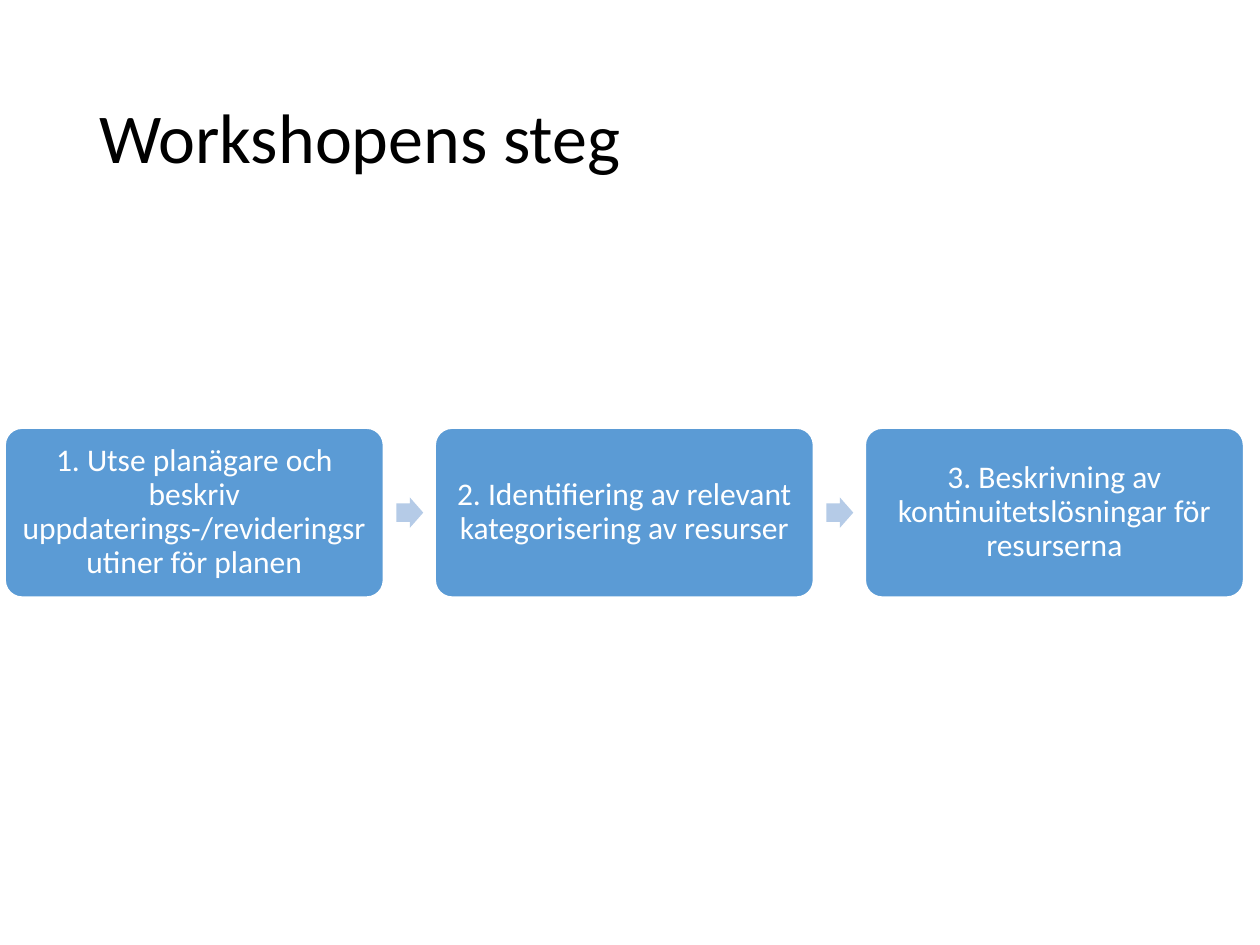
from pptx import Presentation, util as u
from pptx.dml.color import RGBColor
from pptx.enum import shapes, text

W, H = 10, 7.5
STEPS = [
    "1. Utse planägare och beskriv uppdaterings-/revideringsrutiner för planen",
    "2. Identifiering av relevant kategorisering av resurser",
    "3. Beskrivning av kontinuitetslösningar för resurserna",
]


def color(value):
    return RGBColor.from_string(value)


def write(sp, words, size, ink, align):
    tf = sp.text_frame
    tf.word_wrap = True
    tf.vertical_anchor = text.MSO_ANCHOR.MIDDLE
    p = tf.paragraphs[0]
    p.text = words
    p.alignment = align
    p.line_spacing = 0.9
    p.font.name = "Calibri"
    p.font.size = u.Pt(size)
    p.font.color.rgb = color(ink)
    return tf


def add_filled(s, kind, box, fill, adjustments):
    sp = s.shapes.add_shape(kind, *map(u.Inches, box))
    sp.shadow.inherit = False
    sp.fill.solid()
    sp.fill.fore_color.rgb = color(fill)
    sp.line.fill.background()
    for i, value in enumerate(adjustments):
        sp.adjustments[i] = value
    return sp


def add_title(s, box, words):
    sp = s.shapes.add_textbox(*map(u.Inches, box))
    write(sp, words, 40, "000000", text.PP_ALIGN.LEFT)


def add_step(s, box, words):
    sp = add_filled(s, shapes.MSO_SHAPE.ROUNDED_RECTANGLE, box, "5B9BD5", [0.1])
    sp.line.color.rgb = color("FFFFFF")
    sp.line.width = u.Pt(1)
    tf = write(sp, words, 18, "FFFFFF", text.PP_ALIGN.CENTER)
    tf.margin_left = tf.margin_right = u.Inches(0.07)
    tf.margin_top = tf.margin_bottom = u.Inches(0.07)


def add_process(s, box, steps):
    left, top, width, height = box
    gap = width / 24
    step_width = (width - gap * (len(steps) - 1)) / len(steps)
    arrow_width, arrow_height = gap * 0.52, height * 0.18
    arrow_top = top + (height - arrow_height) / 2
    for i, words in enumerate(steps):
        x = left + i * (step_width + gap)
        add_step(s, (x, top, step_width, height), words)
        if i < len(steps) - 1:
            arrow_left = x + step_width + gap / 4
            add_filled(s, shapes.MSO_SHAPE.RIGHT_ARROW,
                       (arrow_left, arrow_top, arrow_width, arrow_height),
                       "B5CBE7", [0.6, 0.5])


def main():
    prs = Presentation()
    prs.slide_width, prs.slide_height = u.Inches(W), u.Inches(H)
    s = prs.slides.add_slide(prs.slide_layouts[6])
    add_title(s, (0.069 * W, 0.053 * H, 0.862 * W, 0.193 * H), "Workshopens steg")
    add_process(s, (0.004 * W, 0.453 * H, 0.983 * W, 0.179 * H), STEPS)
    prs.save("out.pptx")


if __name__ == "__main__":
    main()
